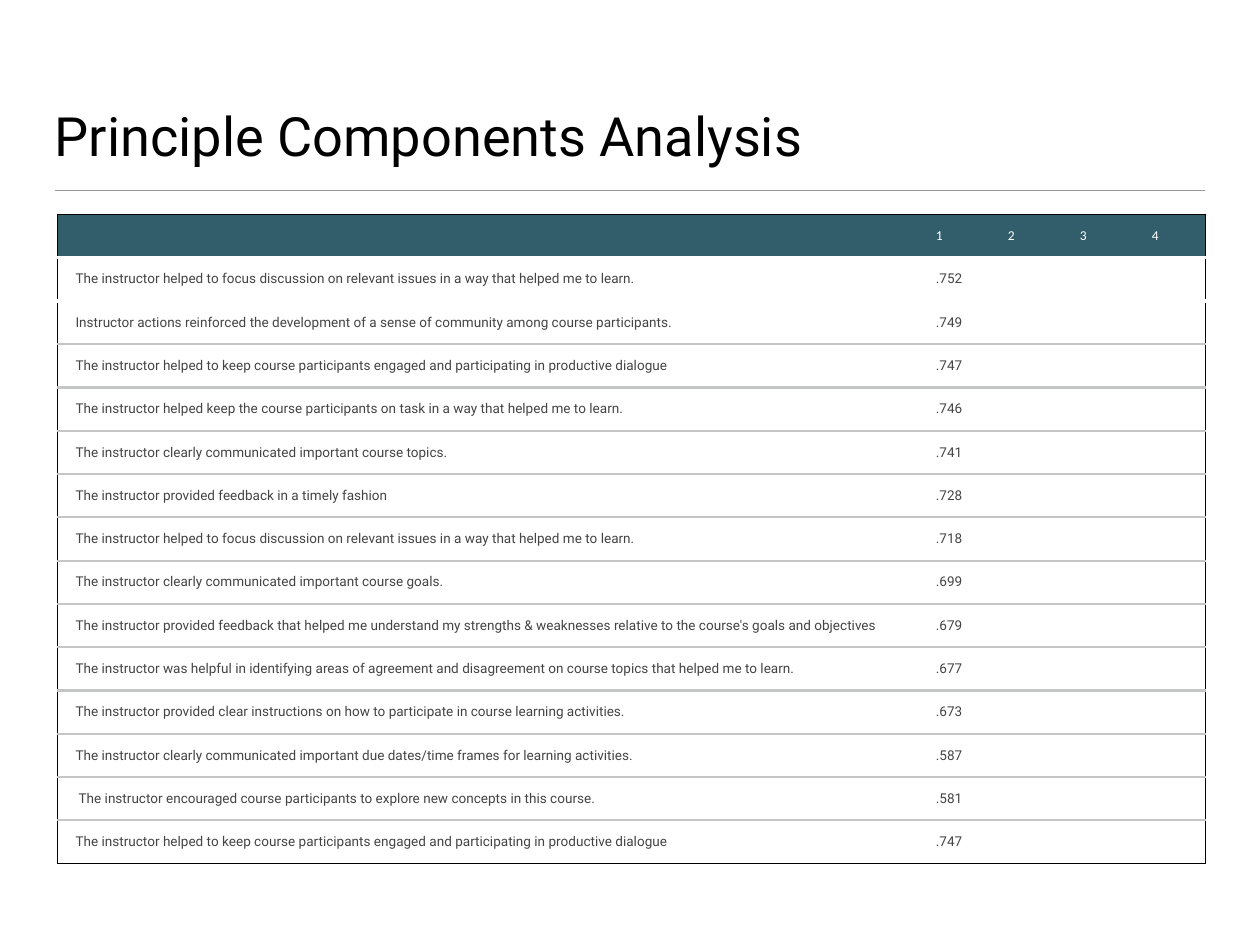
from dataclasses import dataclass

from lxml.etree import SubElement
from pptx import Presentation
from pptx.dml.color import RGBColor
from pptx.enum.shapes import MSO_CONNECTOR
from pptx.enum.text import MSO_ANCHOR, MSO_AUTO_SIZE
from pptx.oxml.ns import qn
from pptx.util import Pt

TITLE = "Principle Components Analysis"
HEADINGS = ("", "1", "2", "3", "4")
LOADINGS = [
    ("The instructor helped to focus discussion on relevant issues in a way that helped me to learn.", ".752"),
    ("Instructor actions reinforced the development of a sense of community among course participants.", ".749"),
    ("The instructor helped to keep course participants engaged and participating in productive dialogue", ".747"),
    ("The instructor helped keep the course participants on task in a way that helped me to learn.", ".746"),
    ("The instructor clearly communicated important course topics.", ".741"),
    ("The instructor provided feedback in a timely fashion", ".728"),
    ("The instructor helped to focus discussion on relevant issues in a way that helped me to learn.", ".718"),
    ("The instructor clearly communicated important course goals.", ".699"),
    ("The instructor provided feedback that helped me understand my strengths & weaknesses "
     "relative to the course's goals and objectives", ".679"),
    ("The instructor was helpful in identifying areas of agreement and disagreement on course topics "
     "that helped me to learn.", ".677"),
    ("The instructor provided clear instructions on how to participate in course learning activities.", ".673"),
    ("The instructor clearly communicated important due dates/time frames for learning activities.", ".587"),
    (" The instructor encouraged course participants to explore new concepts in this course.", ".581"),
    ("The instructor helped to keep course participants engaged and participating in productive dialogue", ".747"),
]


@dataclass(frozen=True)
class Theme:
    black: str = "000000"
    white: str = "FFFFFF"
    header: str = "325D6B"
    body: str = "444444"
    grid: str = "C4C6C6"
    rule: str = "9A9A9A"
    font: str = "Roboto"
    header_font: str = "Calibri"
    title_size: int = 44
    table_size: int = 11


THEME = Theme()
NO_GRID_STYLE = "{2D5ABB26-0587-4C30-8999-92F81FD0307C}"
SLIDE_WIDTH, SLIDE_HEIGHT = 1024, 768
LEFT = 44.6
RULE_TOP, RULE_WIDTH = 154.6, 934.6
TABLE_LEFT, TABLE_TOP = 46.9, 174.2
ROW_HEIGHT = 35.2
COLUMN_WIDTHS = (699.2, 58.5, 58.5, 58.5, 58.5)
CELL_MARGIN, CELL_INDENT = 4.5, 10

OUTLINE = (THEME.black, 1)
HEADER_EDGE = (THEME.white, 3)
GRID_LINE = (THEME.grid, 2)


def set_attributes(target, values):
    for name, value in values.items():
        setattr(target, name, value)


def format_font(font, name, size, color):
    set_attributes(font, {"name": name, "size": Pt(size), "bold": False})
    font.color.rgb = RGBColor.from_string(color)


def row_edge(index, row_count):
    """Return the border above row `index`; index row_count is the table's foot."""
    if index in (0, row_count):
        return OUTLINE
    return HEADER_EDGE if index <= 2 else GRID_LINE


def add_borders(cell, borders):
    properties = cell._tc.get_or_add_tcPr()
    for side in "LRTB":
        border = borders.get(side)
        line = SubElement(properties, qn(f"a:ln{side}"), w=str(Pt(border[1]) if border else 0))
        if border:
            fill = SubElement(line, qn("a:solidFill"))
            SubElement(fill, qn("a:srgbClr"), val=border[0])
        else:
            SubElement(line, qn("a:noFill"))


def fill_cell(cell, text, is_header, is_numeric):
    set_attributes(cell, {
        "text": text, "vertical_anchor": MSO_ANCHOR.MIDDLE,
        "margin_left": Pt(CELL_MARGIN), "margin_right": Pt(CELL_MARGIN),
        "margin_top": Pt(CELL_MARGIN), "margin_bottom": Pt(CELL_MARGIN),
    })
    paragraph = cell.text_frame.paragraphs[0]
    paragraph._p.get_or_add_pPr().set("marL", str(Pt(CELL_INDENT)))
    format_font(paragraph.font, THEME.header_font if is_header else THEME.font,
                THEME.table_size, THEME.white if is_header else THEME.body)
    if is_header:
        cell.fill.solid()
        cell.fill.fore_color.rgb = RGBColor.from_string(THEME.header)
    else:
        cell.fill.background()


def add_title(slide):
    title = slide.shapes.title
    set_attributes(title, {"left": Pt(LEFT), "top": Pt(26), "width": Pt(934), "height": Pt(110)})
    frame = title.text_frame
    set_attributes(frame, {
        "text": TITLE, "vertical_anchor": MSO_ANCHOR.BOTTOM, "word_wrap": True,
        "auto_size": MSO_AUTO_SIZE.NONE, "margin_left": 0, "margin_right": 0,
        "margin_top": 0, "margin_bottom": 0,
    })
    paragraph = frame.paragraphs[0]
    paragraph._p.get_or_add_pPr().set("algn", "l")
    format_font(paragraph.runs[0].font, THEME.font, THEME.title_size, THEME.black)


def add_rule(slide):
    rule = slide.shapes.add_connector(MSO_CONNECTOR.STRAIGHT, Pt(LEFT), Pt(RULE_TOP),
                                      Pt(LEFT + RULE_WIDTH), Pt(RULE_TOP))
    rule.line.color.rgb = RGBColor.from_string(THEME.rule)
    rule.line.width = Pt(1)
    SubElement(rule._element.spPr, qn("a:effectLst"))


def add_loadings_table(slide):
    rows = [HEADINGS] + [(item, loading, "", "", "") for item, loading in LOADINGS]
    last_column = len(HEADINGS) - 1
    table = slide.shapes.add_table(len(rows), len(HEADINGS), Pt(TABLE_LEFT), Pt(TABLE_TOP),
                                   Pt(sum(COLUMN_WIDTHS)), Pt(ROW_HEIGHT * len(rows))).table
    set_attributes(table, {"first_row": True, "horz_banding": False})
    table._tbl.tblPr.find(qn("a:tableStyleId")).text = NO_GRID_STYLE
    for column, width in zip(table.columns, COLUMN_WIDTHS):
        column.width = Pt(width)
    for row_index, row in enumerate(rows):
        table.rows[row_index].height = Pt(ROW_HEIGHT)
        for column_index, text in enumerate(row):
            cell = table.cell(row_index, column_index)
            add_borders(cell, {
                "L": OUTLINE if column_index == 0 else None,
                "R": OUTLINE if column_index == last_column else None,
                "T": row_edge(row_index, len(rows)),
                "B": row_edge(row_index + 1, len(rows)),
            })
            fill_cell(cell, text, row_index == 0, column_index > 0)


def main():
    presentation = Presentation()
    set_attributes(presentation, {"slide_width": Pt(SLIDE_WIDTH), "slide_height": Pt(SLIDE_HEIGHT)})
    slide = presentation.slides.add_slide(presentation.slide_layouts.get_by_name("Title Only"))
    add_rule(slide)
    add_title(slide)
    add_loadings_table(slide)
    presentation.save("out.pptx")


if __name__ == "__main__":
    main()
